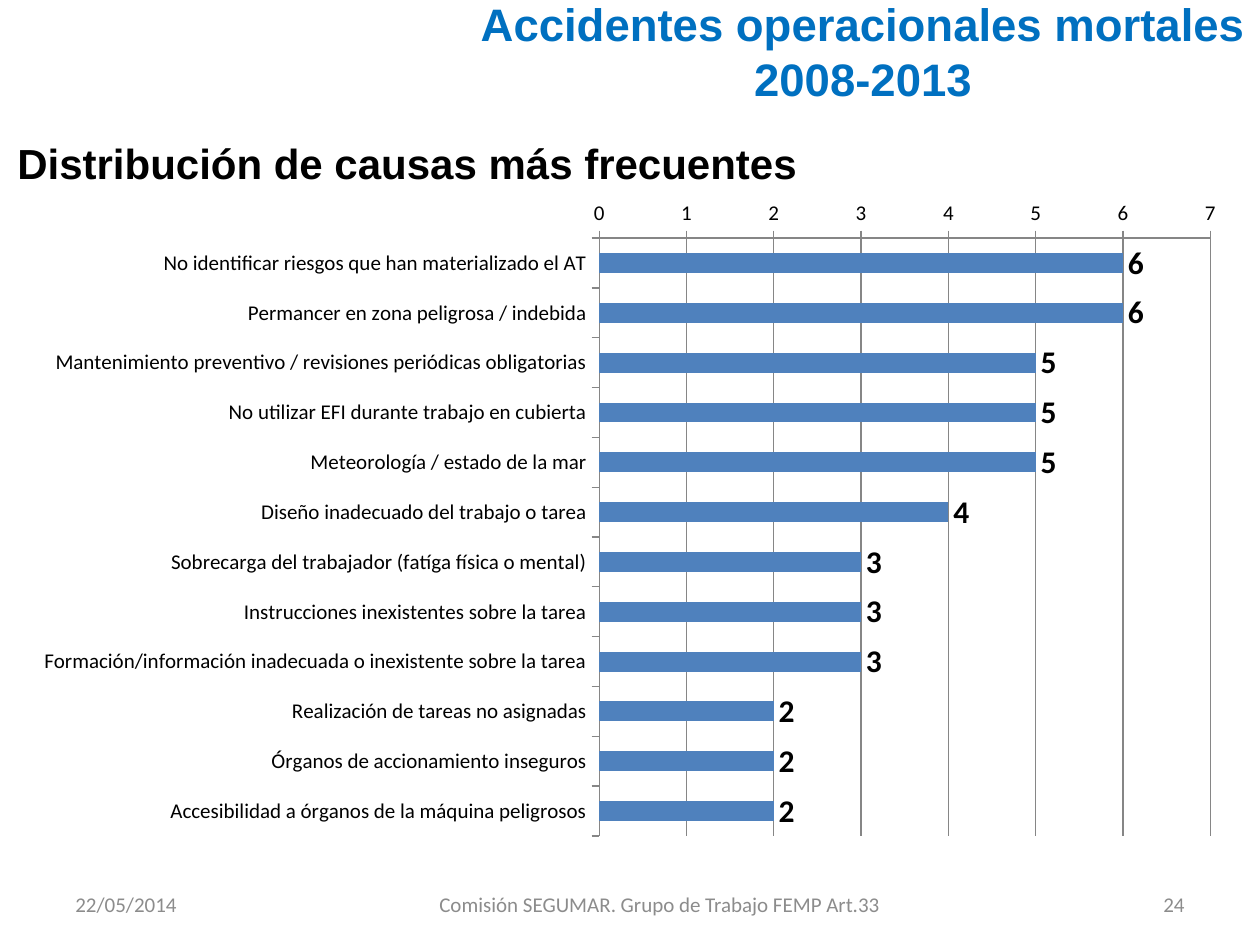
from pptx import Presentation
from pptx.chart.data import CategoryChartData
from pptx.dml.color import RGBColor
from pptx.enum.chart import XL_CHART_TYPE as CT, XL_LABEL_POSITION as LP, XL_TICK_MARK as TM
from pptx.enum.text import MSO_ANCHOR as MA, MSO_AUTO_SIZE as AS, PP_ALIGN as PA
from pptx.util import Cm, Pt

BLACK = RGBColor(0x00, 0x00, 0x00)
TITLE_BLUE = RGBColor(0x00, 0x70, 0xC0)
BAR_BLUE = RGBColor(0x4F, 0x81, 0xBD)
FOOTER_GRAY = RGBColor(0x8C, 0x8C, 0x8C)
AXIS_GRAY = RGBColor(0x86, 0x86, 0x86)

CAUSES = {
    "No identificar riesgos que han materializado el AT": 6,
    "Permancer en zona peligrosa / indebida": 6,
    "Mantenimiento preventivo / revisiones periódicas obligatorias": 5,
    "No utilizar EFI durante trabajo en cubierta": 5,
    "Meteorología / estado de la mar": 5,
    "Diseño inadecuado del trabajo o tarea": 4,
    "Sobrecarga del trabajador (fatíga física o mental)": 3,
    "Instrucciones inexistentes sobre la tarea": 3,
    "Formación/información inadecuada o inexistente sobre la tarea": 3,
    "Realización de tareas no asignadas": 2,
    "Órganos de accionamiento inseguros": 2,
    "Accesibilidad a órganos de la máquina peligrosos": 2,
}


class SlideBuilder:
    heading = {"name": "Arial", "bold": True}
    footer = {"name": "Calibri", "size": Pt(12)}

    def __init__(self, prs):
        self.s = prs.slides.add_slide(prs.slide_layouts[5])

    def set_font(self, font, color, **values):
        for key, value in values.items():
            setattr(font, key, value)
        font.color.rgb = color

    def fill_text(self, sp, lines, color, style, align, anchor):
        tf = sp.text_frame
        for key, value in {"word_wrap": True, "auto_size": AS.NONE,
                           "vertical_anchor": anchor}.items():
            setattr(tf, key, value)
        for i, line in enumerate(lines):
            p = tf.add_paragraph() if i else tf.paragraphs[0]
            p.alignment = align
            r = p.add_run()
            r.text = line
            self.set_font(r.font, color, **style)

    def title(self, lines, x, y, w, h):
        sp = self.s.shapes.title
        sp.left, sp.top, sp.width, sp.height = Cm(x), Cm(y), Cm(w), Cm(h)
        style = {**self.heading, "size": Pt(26)}
        self.fill_text(sp, lines, TITLE_BLUE, style, PA.CENTER, MA.MIDDLE)

    def text(self, text, x, y, w, h, color, style, align=PA.LEFT, anchor=MA.TOP):
        sp = self.s.shapes.add_textbox(Cm(x), Cm(y), Cm(w), Cm(h))
        self.fill_text(sp, [text], color, style, align, anchor)

    def bar_chart(self, values, x, y, w, h):
        data = CategoryChartData()
        data.categories = list(values)
        data.add_series("Series 1", list(values.values()))
        chart = self.s.shapes.add_chart(
            CT.BAR_CLUSTERED, Cm(x), Cm(y), Cm(w), Cm(h), data).chart
        chart.has_legend = chart.has_title = False
        self.set_font(chart.font, BLACK, name="Calibri", size=Pt(10))

        # Axes, with the first cause on top
        cat, val = chart.category_axis, chart.value_axis
        for axis in (cat, val):
            axis.major_tick_mark = TM.OUTSIDE
            axis.format.line.color.rgb = AXIS_GRAY
            self.set_font(axis.tick_labels.font, BLACK, size=Pt(12))
        cat.reverse_order = True
        val.minimum_scale, val.maximum_scale, val.major_unit = 0, 7, 1
        val.has_major_gridlines = True
        val.major_gridlines.format.line.color.rgb = AXIS_GRAY

        # Bars and their values
        plot = chart.plots[0]
        plot.gap_width, plot.vary_by_categories = 150, False
        fill = plot.series[0].format.fill
        fill.solid()
        fill.fore_color.rgb = BAR_BLUE
        plot.has_data_labels = True
        labels = plot.data_labels
        labels.show_value, labels.position = True, LP.OUTSIDE_END
        self.set_font(labels.font, BLACK, size=Pt(18), bold=True)


def main():
    prs = Presentation()
    prs.slide_width, prs.slide_height = Cm(25.4), Cm(19.05)
    b = SlideBuilder(prs)

    # Headings
    b.title(["Accidentes operacionales mortales", "2008-2013"], 9.3, -0.28, 16.2, 2.6)
    b.text("Distribución de causas más frecuentes", 0.1, 2.64, 25.27, 1.28,
           BLACK, {**b.heading, "size": Pt(24)})

    # Causes
    b.bar_chart(CAUSES, 0.4, 3.78, 24.6, 13.34)

    # Footer
    for text, x, w, align in (
            ("22/05/2014", 1.27, 5.93, PA.LEFT),
            ("Comisión SEGUMAR. Grupo de Trabajo FEMP Art.33", 8.3, 10, PA.CENTER),
            ("24", 20.9, 3.23, PA.RIGHT)):
        b.text(text, x, 17.73, w, 1.01, FOOTER_GRAY, b.footer, align, MA.MIDDLE)

    prs.save("out.pptx")


if __name__ == "__main__":
    main()
